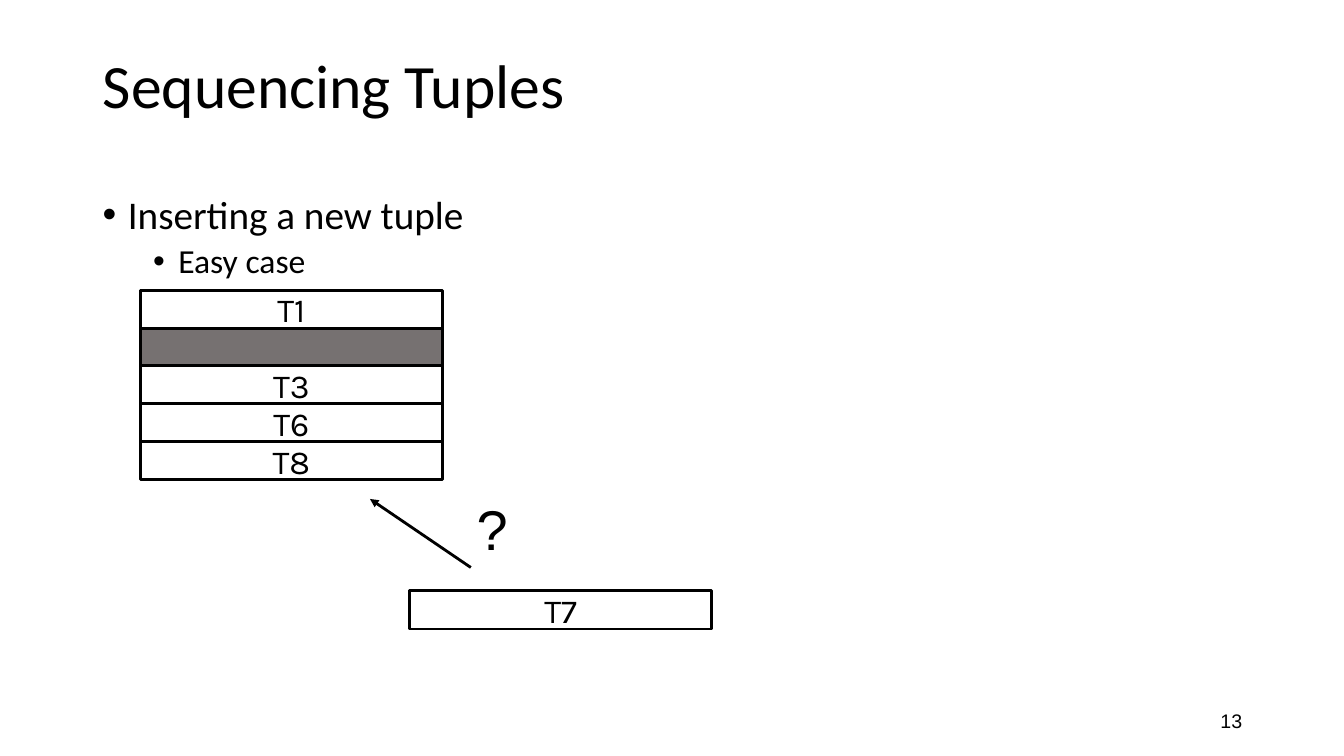
from dataclasses import dataclass
from typing import Any

import pptx
import pptx.dml.color
import pptx.enum.shapes
import pptx.enum.text
import pptx.oxml.ns
import pptx.oxml.xmlchemy
import pptx.util

Inches = pptx.util.Inches
Pt = pptx.util.Pt
ALIGN = pptx.enum.text.PP_ALIGN
ANCHOR = pptx.enum.text.MSO_ANCHOR


@dataclass(frozen=True)
class Theme:
    ink: str = "000000"
    paper: str = "FFFFFF"
    deleted: str = "767171"
    heading_font: str = "Calibri"
    tuple_font: str = "Karla"
    plain_font: str = "Arial"
    title_size: int = 44
    bullet_size: int = 28
    sub_bullet_size: int = 24
    tuple_size: int = 24
    question_size: int = 40
    number_size: int = 14
    line_width: int = 2


@dataclass(frozen=True)
class TupleSlot:
    label: str
    left: float
    top: float
    fill: str


@dataclass(frozen=True)
class Bullet:
    text: str
    size: int
    indent: float
    space_before: int


THEME = Theme()
SLOT_WIDTH, SLOT_HEIGHT = 3, 0.38
STACK_LEFT, STACK_TOP, STACK_STEP = 1.39, 2.88, 0.375
STACK_LABELS = ["T1", "", "T3", "T6", "T8"]  # the empty label is the free slot
BULLET_HANG = 0.25


def apply_format(target: Any, values: dict[str, Any]) -> None:
    for name, value in values.items():
        setattr(target, name, value)


def colour(code: str) -> pptx.dml.color.RGBColor:
    return pptx.dml.color.RGBColor.from_string(code)


def add_element(parent: Any, tag: str, **attributes: str) -> None:
    element = pptx.oxml.xmlchemy.OxmlElement(tag)
    for name, value in attributes.items():
        element.set(name, value)
    parent.append(element)


def write_text(para: Any, text: str, font: str, size: int, **para_format: Any) -> None:
    span = para.add_run()
    span.text = text
    apply_format(span.font, {"name": font, "size": Pt(size)})
    span.font.color.rgb = colour(THEME.ink)
    apply_format(para, para_format)


def add_text_box(page: Any, left: float, top: float, width: float, height: float,
                 **frame_format: Any) -> Any:
    box = page.shapes.add_textbox(Inches(left), Inches(top), Inches(width), Inches(height))
    apply_format(box.text_frame, frame_format)
    return box.text_frame


def add_title(page: Any, text: str) -> None:
    title = page.shapes.title
    apply_format(title, {"left": Inches(0.92), "top": Inches(0.33),
                         "width": Inches(11.5), "height": Inches(1.09)})
    title.text_frame.vertical_anchor = ANCHOR.MIDDLE
    write_text(title.text_frame.paragraphs[0], text, THEME.heading_font,
               THEME.title_size, alignment=ALIGN.LEFT, line_spacing=0.9)


def add_bullets(page: Any, bullets: list[Bullet]) -> None:
    frame = add_text_box(page, 0.92, 1.54, 11.5, 5.22, word_wrap=True,
                         margin_top=Inches(0.4))
    for index, bullet in enumerate(bullets):
        para = frame.add_paragraph() if index else frame.paragraphs[0]
        write_text(para, bullet.text, THEME.heading_font, bullet.size,
                   line_spacing=0.9, space_before=Pt(bullet.space_before))
        properties = para._p.get_or_add_pPr()
        properties.set("marL", str(Inches(bullet.indent)))
        properties.set("indent", str(-Inches(BULLET_HANG)))
        add_element(properties, "a:buFont", typeface=THEME.plain_font)
        add_element(properties, "a:buChar", char="•")


def add_slot(page: Any, slot: TupleSlot) -> None:
    box = page.shapes.add_shape(
        pptx.enum.shapes.MSO_SHAPE.RECTANGLE, Inches(slot.left), Inches(slot.top),
        Inches(SLOT_WIDTH), Inches(SLOT_HEIGHT))
    box.shadow.inherit = False
    box.fill.solid()
    box.fill.fore_color.rgb = colour(slot.fill)
    box.line.color.rgb = colour(THEME.ink)
    box.line.width = Pt(THEME.line_width)
    if slot.label:
        apply_format(box.text_frame, {"word_wrap": False, "vertical_anchor": ANCHOR.MIDDLE})
        write_text(box.text_frame.paragraphs[0], slot.label, THEME.tuple_font,
                   THEME.tuple_size, alignment=ALIGN.CENTER)


def add_arrow(page: Any, start: tuple[float, float], end: tuple[float, float]) -> None:
    arrow = page.shapes.add_connector(
        pptx.enum.shapes.MSO_CONNECTOR.STRAIGHT, *map(Inches, start + end))
    arrow.line.color.rgb = colour(THEME.ink)
    arrow.line.width = Pt(THEME.line_width)
    properties = arrow._element.spPr
    add_element(properties.find(pptx.oxml.ns.qn("a:ln")), "a:tailEnd", type="triangle")
    add_element(properties, "a:effectLst")


def main() -> None:
    deck = pptx.Presentation()
    apply_format(deck, {"slide_width": Inches(13.33), "slide_height": Inches(7.5)})
    page = deck.slides.add_slide(deck.slide_layouts.get_by_name("Title Only"))

    # Title, bullets and page number
    add_title(page, "Sequencing Tuples")
    add_bullets(page, [
        Bullet("Inserting a new tuple", THEME.bullet_size, 0.25, 10),
        Bullet("Easy case", THEME.sub_bullet_size, 0.75, 5),
    ])
    number = add_text_box(page, 9.42, 6.95, 3, 0.4, word_wrap=True,
                          vertical_anchor=ANCHOR.MIDDLE)
    write_text(number.paragraphs[0], "13", THEME.plain_font, THEME.number_size,
               alignment=ALIGN.RIGHT)

    # Stored tuples, and the one to insert
    for row, label in enumerate(STACK_LABELS):
        fill = THEME.paper if label else THEME.deleted
        add_slot(page, TupleSlot(label, STACK_LEFT, STACK_TOP + row * STACK_STEP, fill))
    add_slot(page, TupleSlot("T7", 4.06, 5.86, THEME.paper))

    # Open question of where it goes
    add_arrow(page, (4.67, 5.63), (3.67, 4.95))
    question = add_text_box(page, 4.63, 4.86, 0.51, 0.77, word_wrap=False,
                            auto_size=pptx.enum.text.MSO_AUTO_SIZE.SHAPE_TO_FIT_TEXT)
    write_text(question.paragraphs[0], "?", THEME.plain_font, THEME.question_size)

    deck.save("out.pptx")


if __name__ == "__main__":
    main()
